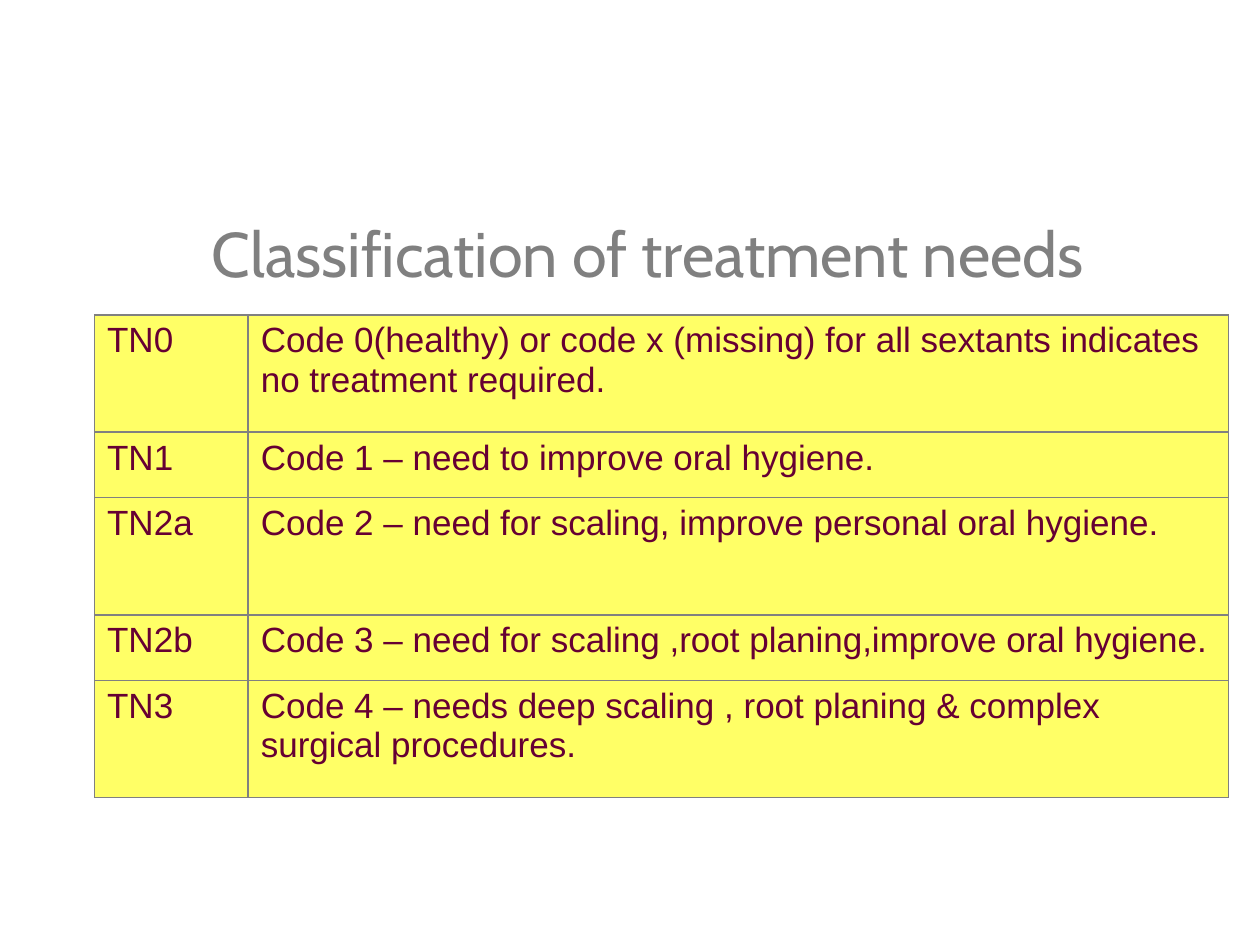
from dataclasses import dataclass

from lxml import etree
from pptx import Presentation
from pptx import util as u
from pptx.dml.color import RGBColor
from pptx.enum import text
from pptx.oxml import ns


@dataclass(frozen=True)
class Theme:
    title_font: str = "Cabin"
    body_font: str = "Arial"
    title_size: int = 36
    body_size: int = 20
    title_color: str = "808080"
    body_color: str = "660033"
    cell_fill: str = "FFFF66"
    border_color: str = "808080"
    border_width: int = 1


class SlideBuilder:
    """Holds the theme and the current slide."""

    def __init__(self, slide, theme):
        self.slide = slide
        self.theme = theme

    def add_text(self, frame, words, font, size, color):
        paragraph = frame.paragraphs[0]
        paragraph.alignment = text.PP_ALIGN.LEFT
        run = paragraph.add_run()
        run.text = words
        run.font.name = font
        run.font.size = u.Pt(size)
        run.font.color.rgb = RGBColor.from_string(color)

    def title(self, words, left, top, width, height):
        shape = self.slide.shapes.title
        shape.left, shape.top = u.Inches(left), u.Inches(top)
        shape.width, shape.height = u.Inches(width), u.Inches(height)
        frame = shape.text_frame
        frame.word_wrap = True
        frame.auto_size = text.MSO_AUTO_SIZE.NONE
        frame.vertical_anchor = text.MSO_ANCHOR.MIDDLE
        theme = self.theme
        self.add_text(frame, words, theme.title_font, theme.title_size, theme.title_color)

    def borders(self, cell):
        properties = cell._tc.get_or_add_tcPr()
        for position, side in enumerate(("lnL", "lnR", "lnT", "lnB")):
            line = etree.Element(ns.qn(f"a:{side}"), w=str(u.Pt(self.theme.border_width)))
            fill = etree.SubElement(line, ns.qn("a:solidFill"))
            etree.SubElement(fill, ns.qn("a:srgbClr"), val=self.theme.border_color)
            properties.insert(position, line)  # borders come before the fill

    def table(self, rows, left, top, column_widths, row_heights):
        table = self.slide.shapes.add_table(
            len(rows), len(column_widths), u.Inches(left), u.Inches(top),
            u.Inches(sum(column_widths)), u.Inches(sum(row_heights))).table
        for column, width in zip(table.columns, column_widths):
            column.width = u.Inches(width)
        for row, height, entries in zip(table.rows, row_heights, rows):
            row.height = u.Inches(height)
            for cell, words in zip(row.cells, entries):
                self.cell(cell, words)

    def cell(self, cell, words):
        theme = self.theme
        cell.fill.solid()
        cell.fill.fore_color.rgb = RGBColor.from_string(theme.cell_fill)
        self.borders(cell)
        self.add_text(cell.text_frame, words, theme.body_font, theme.body_size, theme.body_color)


TREATMENT_NEEDS = [
    ("TN0", "Code 0(healthy) or code x (missing) for all sextants indicates "
            "no treatment required."),
    ("TN1", "Code 1 – need to improve oral hygiene."),
    ("TN2a", "Code 2 – need for scaling, improve personal oral hygiene."),
    ("TN2b", "Code 3 – need for scaling ,root planing,improve oral hygiene."),
    ("TN3", "Code 4 – needs deep scaling , root planing & complex surgical procedures."),
]
TALL, SHORT = 0.93, 0.52


def main():
    presentation = Presentation()
    presentation.slide_width, presentation.slide_height = u.Inches(10), u.Inches(7.5)
    title_only = presentation.slide_layouts[5]
    builder = SlideBuilder(presentation.slides.add_slide(title_only), Theme())

    # Heading
    builder.title("Classification of treatment needs", 1.58, 1.75, 8, 0.5)

    # Treatment need codes
    builder.table(TREATMENT_NEEDS, 0.75, 2.5, column_widths=(1.22, 7.78),
                  row_heights=(TALL, SHORT, TALL, SHORT, TALL))

    presentation.save("out.pptx")


if __name__ == "__main__":
    main()
